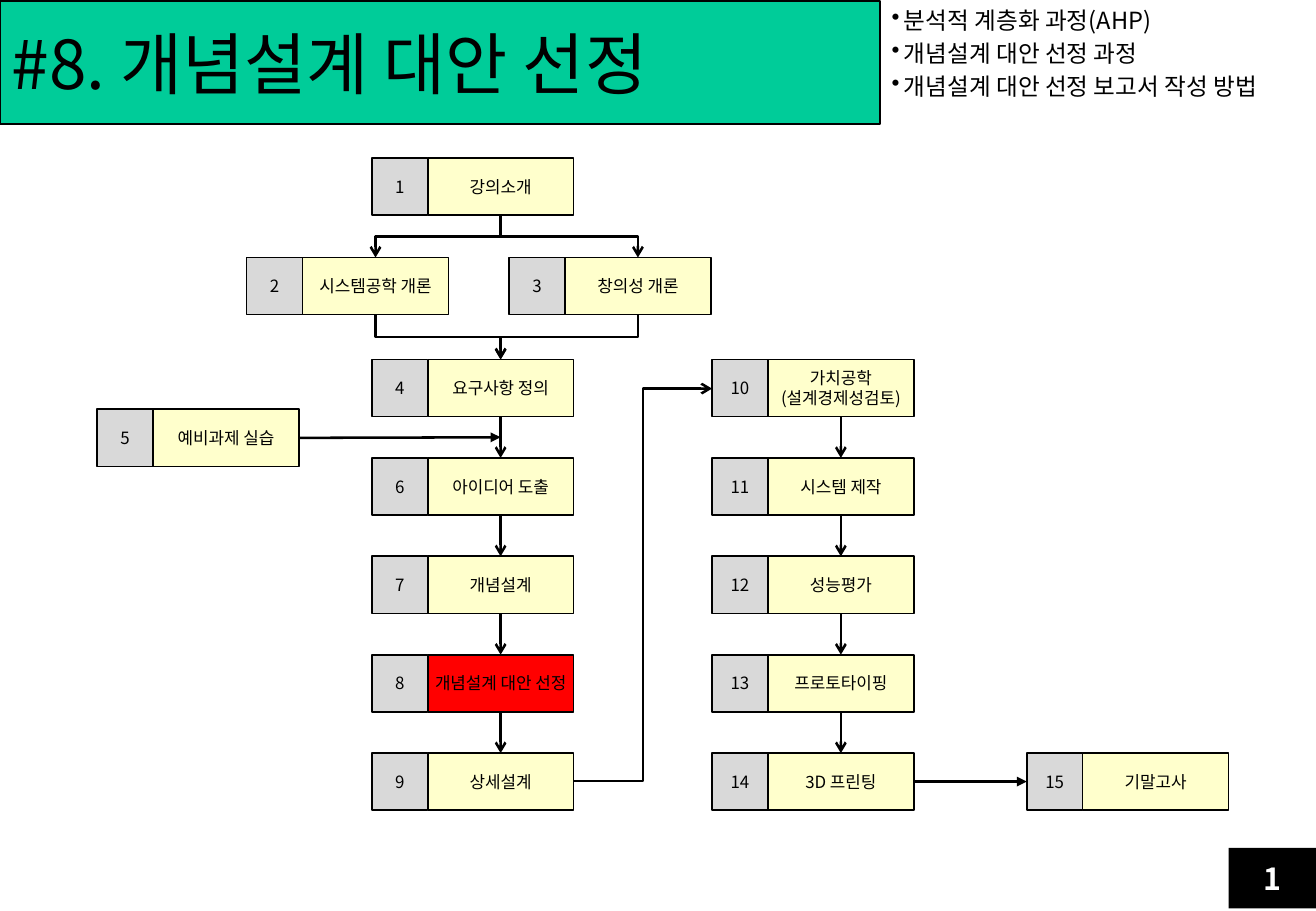
from lxml import etree
from pptx import Presentation
from pptx.dml.color import RGBColor
from pptx.enum.shapes import MSO_CONNECTOR, MSO_SHAPE
from pptx.enum.text import MSO_ANCHOR, PP_ALIGN
from pptx.oxml.ns import qn
from pptx.util import Pt

PX = 9144  # EMU per px, 100 px to the inch
FONT = "Noto Sans CJK KR"
BLACK = RGBColor(0x00, 0x00, 0x00)
WHITE = RGBColor(0xFF, 0xFF, 0xFF)
GREEN = RGBColor(0x00, 0xCC, 0x99)
GRAY = RGBColor(0xD9, 0xD9, 0xD9)
CREAM = RGBColor(0xFF, 0xFF, 0xCC)
RED = RGBColor(0xFF, 0x00, 0x00)

presentation = Presentation()
presentation.slide_width = 1083 * PX
presentation.slide_height = 750 * PX
slide = presentation.slides.add_slide(presentation.slide_layouts[6])


def add_text(text, left, top, width, height, fill=None, outline=True, preset=MSO_SHAPE.RECTANGLE,
             size=10, color=BLACK, bold=False, align=PP_ALIGN.CENTER, wrap=True,
             margins=(10, 5), bullet=False):
    box = [length * PX for length in (left, top, width, height)]
    if fill is None:
        shape = slide.shapes.add_textbox(*box)
    else:
        shape = slide.shapes.add_shape(preset, *box)
        shape.shadow.inherit = False
        shape.fill.solid()
        shape.fill.fore_color.rgb = fill
        if outline:
            shape.line.color.rgb = BLACK
            shape.line.width = Pt(1)
        else:
            shape.line.fill.background()
    frame = shape.text_frame
    frame.word_wrap = wrap
    frame.vertical_anchor = MSO_ANCHOR.TOP if fill is None else MSO_ANCHOR.MIDDLE
    frame.margin_left = frame.margin_right = margins[0] * PX
    frame.margin_top = frame.margin_bottom = margins[1] * PX
    for index, line in enumerate(text.split("\n")):
        paragraph = frame.add_paragraph() if index else frame.paragraphs[0]
        paragraph.alignment = align
        run = paragraph.add_run()
        run.text = line
        run.font.name = FONT
        run.font.size = Pt(size)
        run.font.bold = bold
        run.font.color.rgb = color
        etree.SubElement(run.font._element, qn("a:ea"), typeface=FONT)
        if bullet:
            paragraph.space_before = Pt(size * 0.2)
            properties = paragraph._p.get_or_add_pPr()
            properties.set("marL", str(10 * PX))
            properties.set("indent", str(-10 * PX))
            etree.SubElement(properties, qn("a:buChar"), char="•")
    return shape


def add_arrow(begin, end, kind=MSO_CONNECTOR.STRAIGHT, head="arrow"):
    points = [round(value * PX) for value in (*begin, *end)]
    connector = slide.shapes.add_connector(kind, *points)
    connector.line.color.rgb = BLACK
    connector.line.width = Pt(1.5)
    line = connector.line._get_or_add_ln()
    etree.SubElement(line, qn("a:tailEnd"), type=head)
    etree.SubElement(connector._element.spPr, qn("a:effectLst"))
    return connector


# Title, topics and page number
add_text("#8. 개념설계 대안 선정", 0, 1, 724, 101, fill=GREEN, size=40,
         align=PP_ALIGN.LEFT, wrap=False)
add_text("분석적 계층화 과정(AHP)\n개념설계 대안 선정 과정\n개념설계 대안 선정 보고서 작성 방법",
         724, 0, 359, 146, size=14, align=PP_ALIGN.LEFT, bullet=True)
add_text("1", 1011, 698, 72, 50, fill=BLACK, outline=False, size=18, color=WHITE, bold=True)

# Lecture steps: a number cell and a label cell each
NUMBER_WIDTH, LABEL_WIDTH, STEP_HEIGHT = 46, 120, 47
MAIN_LEFT, BUILD_LEFT = 306, 586
ROWS = [296 + 81 * row for row in range(5)]
steps = [
    (1, "강의소개", MAIN_LEFT, 130),
    (2, "시스템공학 개론", 203, 212),
    (3, "창의성 개론", 419, 212),
    (5, "예비과제 실습", 80, 337),
    (15, "기말고사", 845, ROWS[4]),
]
main_steps = [(4, "요구사항 정의"), (6, "아이디어 도출"), (7, "개념설계"),
              (8, "개념설계 대안 선정"), (9, "상세설계")]
build_steps = [(10, "가치공학\n(설계경제성검토)"), (11, "시스템 제작"), (12, "성능평가"),
               (13, "프로토타이핑"), (14, "3D 프린팅")]
for left, column in ((MAIN_LEFT, main_steps), (BUILD_LEFT, build_steps)):
    steps += [(number, label, left, top) for (number, label), top in zip(column, ROWS)]

numbers, labels = {}, {}
for number, label, left, top in steps:
    labels[number] = add_text(label, left + NUMBER_WIDTH, top, LABEL_WIDTH, STEP_HEIGHT,
                              fill=RED if number == 8 else CREAM,
                              preset=MSO_SHAPE.FLOWCHART_PROCESS, margins=(4, 4))
    numbers[number] = add_text(str(number), left, top, NUMBER_WIDTH, STEP_HEIGHT, fill=GRAY,
                               preset=MSO_SHAPE.FLOWCHART_PROCESS, margins=(0, 4))

# Straight arrows down both columns
for column in (main_steps, build_steps):
    for (upper, _), (lower, _) in zip(column, column[1:]):
        connector = add_arrow((0, 0), (0, 0))
        connector.begin_connect(labels[upper], 2)
        connector.end_connect(labels[lower], 0)

# Straight arrows to the right
connector = add_arrow((246, 360), (412, 360), head="triangle")
connector.begin_connect(labels[5], 3)
connector = add_arrow((0, 0), (0, 0), head="triangle")
connector.begin_connect(labels[14], 3)
connector.end_connect(numbers[15], 1)

# Elbows running down: a sideways elbow turned by a quarter
for begin, end in (((412, 177), (309, 212)), ((412, 177), (525, 212)),
                   ((309, 259), (412, 296)), ((525, 259), (412, 296))):
    middle_x, middle_y = (begin[0] + end[0]) / 2, (begin[1] + end[1]) / 2
    side = 1 if end[0] < begin[0] else -1
    half_drop, half_run = (end[1] - begin[1]) / 2, abs(end[0] - begin[0]) / 2
    connector = add_arrow((middle_x - side * half_drop, middle_y - half_run),
                          (middle_x + side * half_drop, middle_y + half_run),
                          kind=MSO_CONNECTOR.ELBOW)
    connector.rotation = 90 if side == 1 else 270

# Elbow from step 9 up to step 10
add_arrow((472, 643), (586, 320), kind=MSO_CONNECTOR.ELBOW)

presentation.save("out.pptx")
